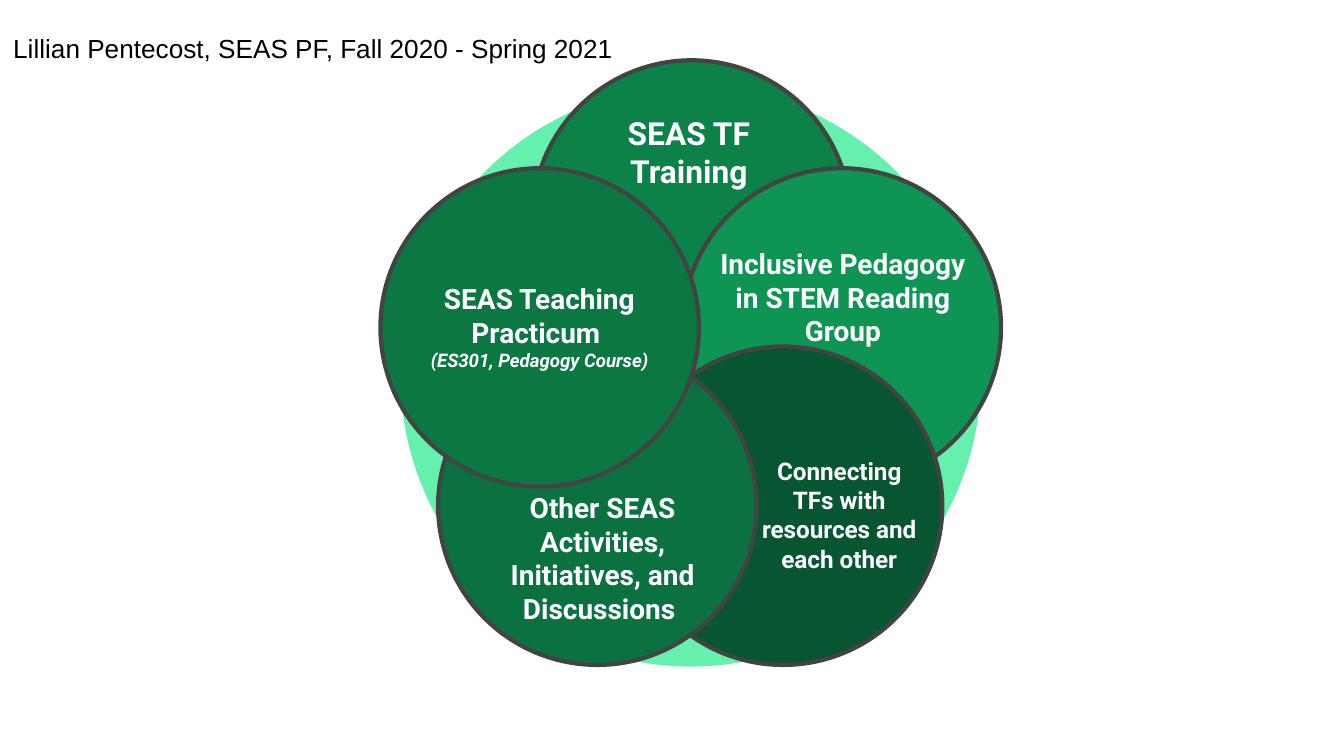
"""Build a slide of five overlapping teaching-programme circles."""
from pptx import Presentation
from pptx.dml.color import RGBColor
from pptx.enum.shapes import MSO_SHAPE
from pptx.enum.text import MSO_ANCHOR, MSO_AUTO_SIZE, PP_ALIGN
from pptx.util import Cm, Pt

OVAL = MSO_SHAPE.OVAL
MIDDLE, TOP = MSO_ANCHOR.MIDDLE, MSO_ANCHOR.TOP
CENTER, LEFT = PP_ALIGN.CENTER, PP_ALIGN.LEFT
GROW = MSO_AUTO_SIZE.SHAPE_TO_FIT_TEXT
FIXED = MSO_AUTO_SIZE.NONE

BLACK = RGBColor(0x00, 0x00, 0x00)
WHITE = RGBColor(0xFF, 0xFF, 0xFF)
OUTLINE = RGBColor(0x43, 0x43, 0x43)
MINT = RGBColor(0x65, 0xF0, 0xAD)
TRAINING_GREEN = RGBColor(0x0C, 0x81, 0x48)
READING_GREEN = RGBColor(0x0E, 0x94, 0x53)
CONNECTING_GREEN = RGBColor(0x08, 0x56, 0x31)
ACTIVITIES_GREEN = RGBColor(0x0B, 0x71, 0x40)
PRACTICUM_GREEN = RGBColor(0x0B, 0x77, 0x43)

DIAMETER = 6.02
INSET = Cm(0.25)
LABEL_FONT = {"name": "Roboto", "bold": True, "italic": False}
NOTE_FONT = {"name": "Roboto", "bold": True, "italic": True}
HEADER_FONT = {"name": "Arial", "bold": False, "italic": False}


def add_circle(shapes, left, top, diameter, color):
    shape = shapes.add_shape(OVAL, Cm(left), Cm(top), Cm(diameter), Cm(diameter))
    shape.shadow.inherit = False
    shape.fill.solid()
    shape.fill.fore_color.rgb = color
    shape.line.fill.background()
    return shape


def add_text(shapes, box, lines, color, anchor, alignment, auto_size):
    text_frame = shapes.add_textbox(*[Cm(length) for length in box]).text_frame
    frame_format = {
        "word_wrap": True, "auto_size": auto_size, "vertical_anchor": anchor,
        "margin_left": INSET, "margin_top": INSET,
        "margin_right": INSET, "margin_bottom": INSET,
    }
    for name, value in frame_format.items():
        setattr(text_frame, name, value)
    for index, (text, size, font_format) in enumerate(lines):
        paragraph = text_frame.add_paragraph() if index else text_frame.paragraphs[0]
        paragraph.alignment = alignment
        run = paragraph.add_run()
        run.text = text
        for name, value in {**font_format, "size": Pt(size)}.items():
            setattr(run.font, name, value)
        run.font.color.rgb = color


presentation = Presentation()
presentation.slide_width = Cm(25.4)
presentation.slide_height = Cm(14.29)
slide = presentation.slides.add_slide(presentation.slide_layouts[6])

add_circle(slide.shapes, 7.57, 1.63, 10.97, MINT)

programmes = [
    (10.06, 1.14, TRAINING_GREEN, (11.18, 1.96, 3.68, 1.83),
     [("SEAS TF Training", 17, LABEL_FONT)]),
    (12.9, 3.18, READING_GREEN, (13.34, 4.7, 5.18, 1.83),
     [("Inclusive Pedagogy in STEM Reading Group", 15, LABEL_FONT)]),
    (11.79, 6.55, CONNECTING_GREEN, (14.02, 8.23, 3.68, 3),
     [("Connecting TFs with resources and each other", 13, LABEL_FONT)]),
    (8.28, 6.55, ACTIVITIES_GREEN, (9.09, 9.63, 4.6, 1.83),
     [("Other SEAS Activities, Initiatives, and Discussions ", 15, LABEL_FONT)]),
    (7.19, 3.18, PRACTICUM_GREEN, (7.72, 5.26, 4.95, 1.83),
     [("SEAS Teaching Practicum ", 15, LABEL_FONT),
      ("(ES301, Pedagogy Course)", 10, NOTE_FONT)]),
]
for left, top, color, label_box, lines in programmes:
    group = slide.shapes.add_group_shape()
    circle = add_circle(group.shapes, left, top, DIAMETER, color)
    circle.line.color.rgb = OUTLINE
    circle.line.width = Pt(2.25)
    add_text(group.shapes, label_box, lines, WHITE, MIDDLE, CENTER, FIXED)

header = [("Lillian Pentecost, SEAS PF, Fall 2020 - Spring 2021", 14, HEADER_FONT)]
add_text(slide.shapes, (0, 0.36, 12.29, 1.12), header, BLACK, TOP, LEFT, GROW)

presentation.save("out.pptx")
